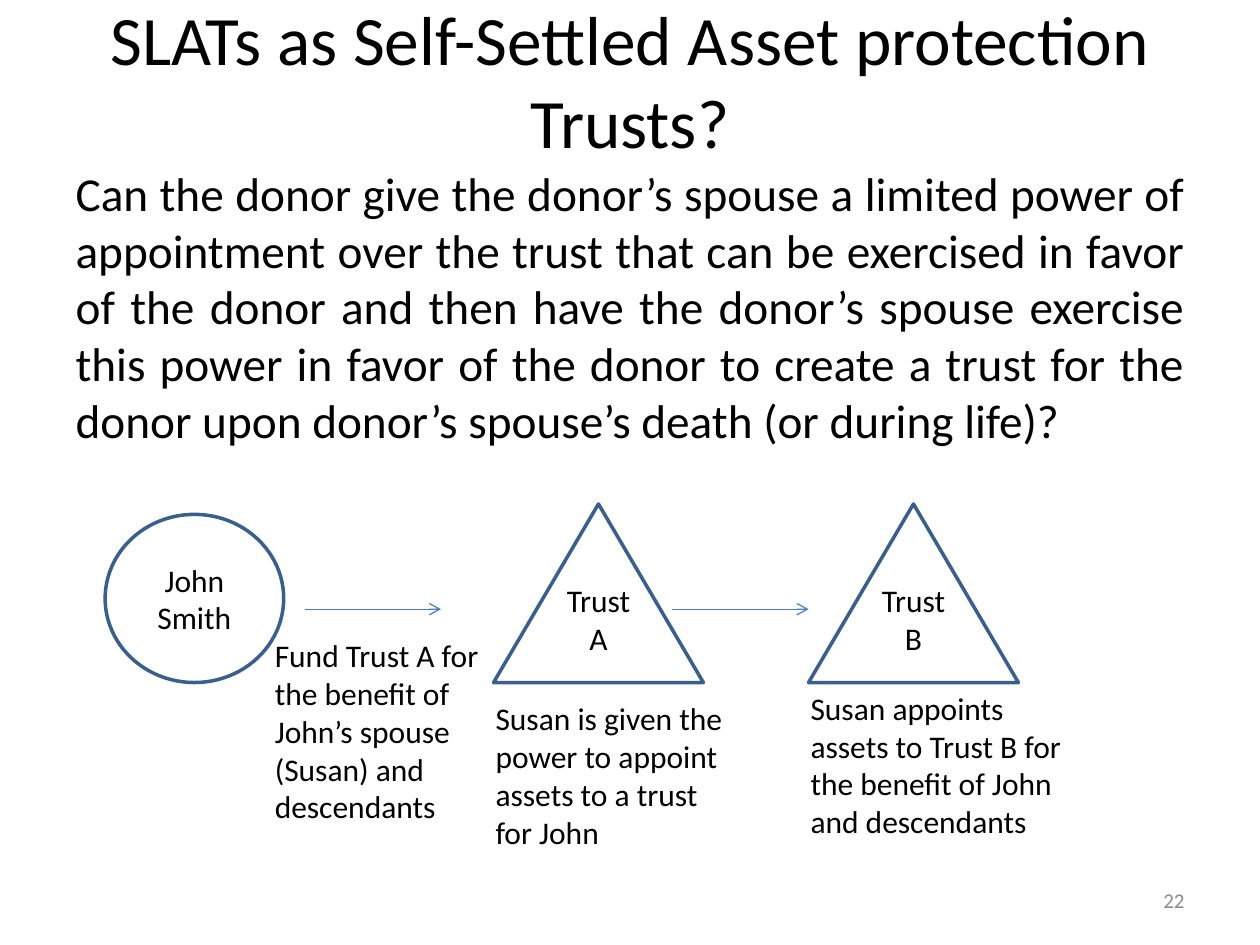
from lxml import etree
from pptx import Presentation
from pptx.dml.color import RGBColor
from pptx.enum.shapes import MSO_CONNECTOR, MSO_SHAPE
from pptx.enum.text import MSO_ANCHOR, MSO_AUTO_SIZE, PP_ALIGN
from pptx.oxml.ns import qn
from pptx.util import Cm, Pt

OVAL, TRI = MSO_SHAPE.OVAL, MSO_SHAPE.ISOSCELES_TRIANGLE
LINE = MSO_CONNECTOR.STRAIGHT
MID, TOP = MSO_ANCHOR.MIDDLE, MSO_ANCHOR.TOP
LEFT, RIGHT = PP_ALIGN.LEFT, PP_ALIGN.RIGHT
CENTER, FULL = PP_ALIGN.CENTER, PP_ALIGN.JUSTIFY
FIXED = MSO_AUTO_SIZE.NONE
BLACK = RGBColor(0, 0, 0)
WHITE = RGBColor(255, 255, 255)
GRAY = RGBColor(0x8C, 0x8C, 0x8C)
NAVY = RGBColor(0x3A, 0x5F, 0x8C)
BLUE = RGBColor(0x4B, 0x7E, 0xBC)

TITLE = "SLATs as Self-Settled Asset protection Trusts?"
BODY = (
    "Can the donor give the donor’s spouse a limited power of appointment "
    "over the trust that can be exercised in favor of the donor and then have "
    "the donor’s spouse exercise this power in favor of the donor to create a "
    "trust for the donor upon donor’s spouse’s death (or during life)?"
)
NODES = [
    ("John Smith", OVAL, (2.12, 10.37, 3.6, 3.39), 0.13),
    ("Trust A", TRI, (9.95, 10.16, 4.23, 3.6), 0.89),
    ("Trust B", TRI, (16.3, 10.16, 4.23, 3.6), 0.89),
]
ARROWS = [(6.14, 8.89), (13.55, 16.3)]
ARROW_Y = 12.28
NOTES = [
    ("Fund Trust A for the benefit of John’s spouse (Susan) and descendants",
     (5.29, 12.7, 5.08, 4.11)),
    ("Susan is given the power to appoint assets to a trust for John",
     (9.74, 13.97, 5.29, 3.33)),
    ("Susan appoints assets to Trust B for the benefit of John and descendants",
     (16.09, 13.76, 5.93, 3.33)),
]
NUMBER = ("22", (18.2, 17.65, 5.93, 1.01))


def write(shape, text, size, align=LEFT, anchor=TOP, color=BLACK):
    frame = shape.text_frame
    frame.text = text
    form = {"word_wrap": True, "auto_size": FIXED, "vertical_anchor": anchor}
    for key, val in form.items():
        setattr(frame, key, val)
    para = frame.paragraphs[0]
    para.alignment = align
    font = para.runs[0].font
    for key, val in {"name": "Calibri", "size": Pt(size)}.items():
        setattr(font, key, val)
    font.color.rgb = color
    return frame


def place(shape, box):
    for key, val in zip(("left", "top", "width", "height"), box):
        setattr(shape, key, Cm(val))


def add_node(slide, text, kind, box, inset):
    node = slide.shapes.add_shape(kind, *map(Cm, box))
    node.shadow.inherit = False
    node.fill.solid()
    node.fill.fore_color.rgb = WHITE
    node.line.color.rgb = NAVY
    node.line.width = Pt(2)
    write(node, text, 18, CENTER, MID).margin_bottom = Cm(inset)


def add_arrow(slide, start, end):
    arrow = slide.shapes.add_connector(
        LINE, Cm(start), Cm(ARROW_Y), Cm(end), Cm(ARROW_Y))
    arrow.line.color.rgb = BLUE
    arrow.line.width = Pt(0.75)
    tail = etree.SubElement(arrow.line._get_or_add_ln(), qn("a:tailEnd"))
    tail.set("type", "arrow")
    etree.SubElement(arrow._element.spPr, qn("a:effectLst"))


def add_note(slide, text, box, size=18, **look):
    note = slide.shapes.add_textbox(*map(Cm, box))
    write(note, text, size, **look)


def main():
    deck = Presentation()
    deck.slide_width, deck.slide_height = Cm(25.4), Cm(19.05)
    slide = deck.slides.add_slide(deck.slide_layouts[1])
    title, body = slide.placeholders
    place(title, (1.27, 0, 22.86, 3.18))
    write(title, TITLE, 39.6, CENTER, MID)
    place(body, (1.27, 3.18, 22.86, 13.54))
    para = write(body, BODY, 27, FULL).paragraphs[0]
    props = para._p.get_or_add_pPr()
    for key in ("marL", "indent"):
        props.set(key, "0")
    etree.SubElement(props, qn("a:buNone"))

    for node in NODES:
        add_node(slide, *node)
    for ends in ARROWS:
        add_arrow(slide, *ends)
    for note in NOTES:
        add_note(slide, *note)
    add_note(slide, *NUMBER, size=12, align=RIGHT, anchor=MID, color=GRAY)
    deck.save("out.pptx")


if __name__ == "__main__":
    main()
